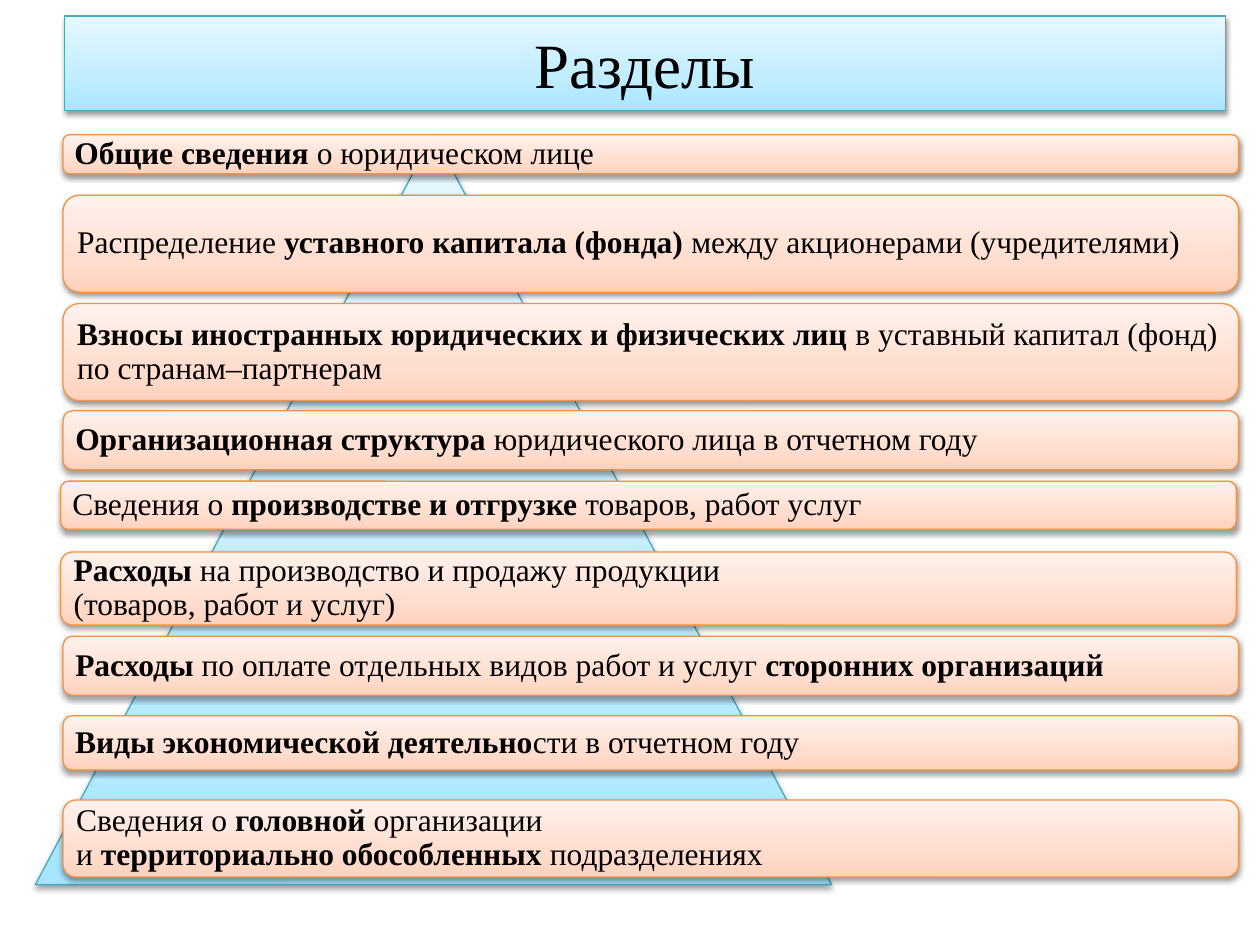
from copy import deepcopy
from dataclasses import dataclass

from lxml.etree import SubElement
from pptx import Presentation
from pptx.dml.color import RGBColor as RGB
from pptx.enum.shapes import MSO_SHAPE as Shape
from pptx.enum.text import MSO_ANCHOR as Anchor, PP_ALIGN as Align
from pptx.oxml.ns import qn
from pptx.util import Pt

COLORS = {
    "text": "000000",
    "shadow": "000000",
    "blue_line": "46AAC5",
    "blue_dark": "A7E6FF",
    "blue_mid": "C1EDFF",
    "blue_light": "E7F8FF",
    "orange_line": "F69240",
    "orange_dark": "FFD2BD",
    "orange_mid": "FFDED0",
    "orange_light": "FFF2ED",
}
FONT = "Times New Roman"
BAR_LEFT = 36
BAR_WIDTH = 671.8
BAR_INSET = 5.4
BOLD_MARK = "*"


@dataclass
class Section:
    top: float
    height: float
    text: str
    left: float = BAR_LEFT


SECTIONS = [
    Section(77, 22.3, "*Общие сведения* о юридическом лице"),
    Section(111.6, 55.4, "Распределение *уставного капитала (фонда) *между акционерами (учредителями)"),
    Section(173.5, 55.4, "*Взносы иностранных юридических и физических лиц *"
                         "в уставный капитал (фонд) по странам–партнерам"),
    Section(234.7, 33.8, "*Организационная структура *юридического лица в отчетном году"),
    Section(275, 27.5, "Сведения о *производстве и отгрузке *товаров, работ услуг", 34.6),
    Section(315.4, 41.8, "*Расходы *на производство и продажу продукции \n(товаров, работ и услуг)", 34.6),
    Section(363.6, 33.8, "*Расходы* по оплате отдельных видов работ и услуг *сторонних организаций*"),
    Section(409, 31, "*Виды экономической деятельно*сти в отчетном году"),
    Section(457.2, 44, "Сведения о *головной *организации \nи *территориально обособленных *подразделениях"),
]


def add_shadow(s) -> None:
    s.shadow.inherit = False
    effects = s._element.spPr.find(qn("a:effectLst"))
    shadow = SubElement(effects, qn("a:outerShdw"), blurRad=str(Pt(3.1)),
                        dist=str(Pt(1.6)), dir="5400000", rotWithShape="0")
    color = SubElement(shadow, qn("a:srgbClr"), val=COLORS["shadow"])
    SubElement(color, qn("a:alpha"), val="38000")


def add_panel(slide, kind: Shape, left: float, top: float,
              width: float, height: float, tone: str):
    s = slide.shapes.add_shape(kind, Pt(left), Pt(top), Pt(width), Pt(height))
    s.fill.gradient()
    s.fill.gradient_angle = 90
    stop_list = s._element.spPr.find(qn("a:gradFill")).find(qn("a:gsLst"))
    stop_list.append(deepcopy(stop_list[-1]))
    shades = (("dark", 0), ("mid", 0.35), ("light", 1))
    for stop, (shade, position) in zip(s.fill.gradient_stops, shades):
        stop.color.rgb = RGB.from_string(COLORS[f"{tone}_{shade}"])
        stop.position = position
    s.line.color.rgb = RGB.from_string(COLORS[f"{tone}_line"])
    s.line.width = Pt(0.75)
    add_shadow(s)
    return s


def format_run(r, size: float, bold: bool = False) -> None:
    r.font.name = FONT
    r.font.size = Pt(size)
    r.font.bold = bold
    r.font.color.rgb = RGB.from_string(COLORS["text"])


def add_title(slide, text: str) -> None:
    s = add_panel(slide, Shape.RECTANGLE, 36.8, 9.2, 663.4, 54, "blue")
    tf = s.text_frame
    tf.text = text
    tf.word_wrap = True
    tf.vertical_anchor = Anchor.MIDDLE
    p = tf.paragraphs[0]
    p.alignment = Align.CENTER
    format_run(p.runs[0], 36)


def add_section(slide, section: Section) -> None:
    s = add_panel(slide, Shape.ROUNDED_RECTANGLE, section.left, section.top,
                  BAR_WIDTH, section.height, "orange")
    tf = s.text_frame
    tf.word_wrap = True
    tf.vertical_anchor = Anchor.MIDDLE
    tf.margin_left = tf.margin_right = Pt(BAR_INSET)
    tf.margin_top = tf.margin_bottom = Pt(BAR_INSET)
    p = tf.paragraphs[0]
    p.alignment = Align.LEFT
    p.line_spacing = 0.9
    for i, part in enumerate(section.text.split(BOLD_MARK)):
        for j, line in enumerate(part.split("\n")):
            if j:
                p.add_line_break()
            if line:
                r = p.add_run()
                r.text = line
                format_run(r, 18, bold=i % 2 == 1)


def main() -> None:
    prs = Presentation()
    prs.slide_width, prs.slide_height = Pt(720), Pt(540)
    slide = prs.slides.add_slide(prs.slide_layouts[6])
    add_title(slide, "Разделы")
    add_panel(slide, Shape.ISOSCELES_TRIANGLE, 20.2, 77, 455, 428.5, "blue")
    for section in SECTIONS:
        add_section(slide, section)
    prs.save("out.pptx")


if __name__ == "__main__":
    main()
